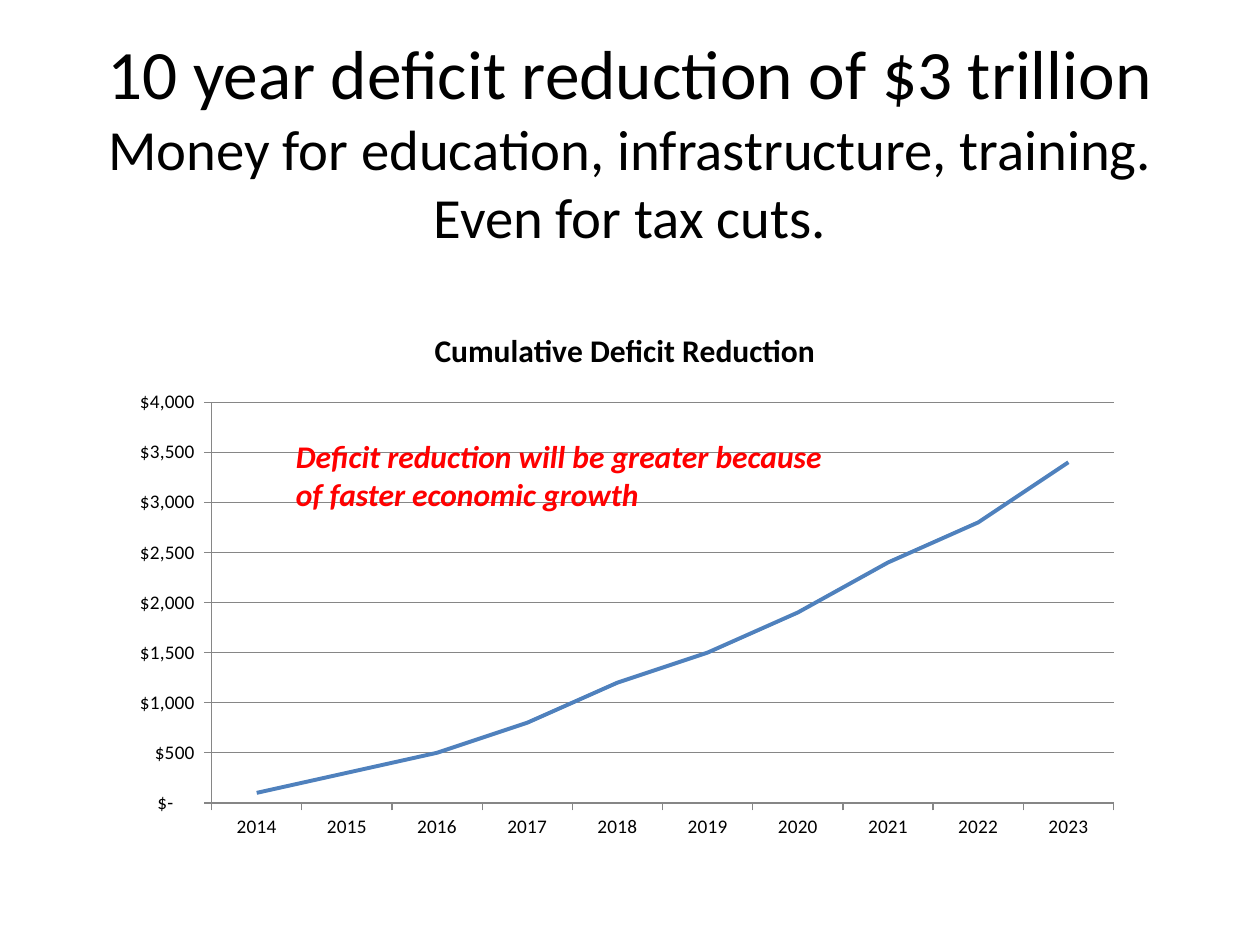
from dataclasses import dataclass

from lxml.etree import SubElement
from pptx import Presentation
from pptx.chart.data import CategoryChartData
from pptx.dml.color import RGBColor
from pptx.enum.chart import XL_CHART_TYPE as ChartType, XL_TICK_MARK as Tick
from pptx.enum.text import MSO_ANCHOR as Anchor, PP_ALIGN as Align
from pptx.oxml.ns import qn
from pptx.slide import Slide
from pptx.util import Inches, Pt

BLACK = RGBColor(0x00, 0x00, 0x00)
RED = RGBColor(0xFF, 0x00, 0x00)
BLUE = RGBColor(0x4F, 0x81, 0xBD)
GRAY = RGBColor(0x86, 0x86, 0x86)

WIDTH, HEIGHT = Inches(10), Inches(7.5)
ACCOUNTING = r'_("$"* #,##0_);_("$"* \(#,##0\);_("$"* "-"??_);_(@_)'
YEARS = range(2014, 2024)
REDUCTION = (100, 300, 500, 800, 1200, 1500, 1900, 2400, 2800, 3400)


@dataclass
class SlideBuilder:
    """Places elements by shares of the slide: left, top, width, height."""
    slide: Slide
    font: str = "Calibri"

    def frame(self, left, top, width, height):
        return (int(WIDTH * left), int(HEIGHT * top),
                int(WIDTH * width), int(HEIGHT * height))

    def style(self, font, size, color=BLACK, bold=False, italic=False):
        font.name, font.size = self.font, Pt(size)
        font.bold, font.italic = bold, italic
        font.color.rgb = color

    def text(self, share, lines, sizes, align=Align.LEFT, anchor=Anchor.TOP, **look):
        """Writes one paragraph whose lines each have their own size."""
        box = self.slide.shapes.add_textbox(*self.frame(*share))
        box.text_frame.word_wrap = True
        box.text_frame.vertical_anchor = anchor
        para = box.text_frame.paragraphs[0]
        para.text = "\v".join(lines)
        para.alignment = align
        for span, size in zip(para.runs, sizes):
            self.style(span.font, size, **look)

    def line_chart(self, share, title, categories, values, plot):
        data = CategoryChartData(number_format=ACCOUNTING)
        data.categories = [str(category) for category in categories]
        data.add_series(title, values)
        chart = self.slide.shapes.add_chart(
            ChartType.LINE, *self.frame(*share), data).chart
        self.style(chart.font, 10)
        chart.has_legend = False

        chart.has_title = True
        heading = chart.chart_title.text_frame
        heading.text = title
        self.style(heading.paragraphs[0].runs[0].font, 18, bold=True)

        chart.plots[0].vary_by_categories = False
        series = chart.plots[0].series[0]
        series.smooth = False
        series.format.line.color.rgb = BLUE
        series.format.line.width = Pt(2.25)

        for axis in (chart.category_axis, chart.value_axis):
            axis.major_tick_mark, axis.minor_tick_mark = Tick.OUTSIDE, Tick.NONE
            self.style(axis.tick_labels.font, 11)
            self.rule(axis.format.line)
        scale = chart.value_axis
        scale.minimum_scale, scale.maximum_scale, scale.major_unit = 0, 4000, 500
        scale.has_major_gridlines = True
        self.rule(scale.major_gridlines.format.line)
        scale.tick_labels.number_format = ACCOUNTING
        scale.tick_labels.number_format_is_linked = False
        self.place_plot(chart, plot)

    def rule(self, line):
        line.color.rgb = GRAY
        line.width = Pt(0.75)

    def place_plot(self, chart, share):
        """Fixes the inner plot area to shares of the chart."""
        area = chart.element.find(".//" + qn("c:plotArea"))
        layout = area.find(qn("c:layout"))
        if layout is None:
            layout = SubElement(area, qn("c:layout"))
            area.insert(0, layout)
        manual = SubElement(layout, qn("c:manualLayout"))
        settings = [("layoutTarget", "inner"), ("xMode", "edge"), ("yMode", "edge")]
        for name, value in settings + list(zip("xywh", share)):
            SubElement(manual, qn("c:" + name)).set("val", str(value))


def main():
    deck = Presentation()
    deck.slide_width, deck.slide_height = WIDTH, HEIGHT
    page = SlideBuilder(deck.slides.add_slide(deck.slide_layouts[6]))
    page.text((0.05, 0.04, 0.9, 0.216),
              ["10 year deficit reduction of $3 trillion",
               "Money for education, infrastructure, training. Even for tax cuts."],
              [39.6, 32.4], align=Align.CENTER, anchor=Anchor.MIDDLE)
    page.line_chart((0.092, 0.323, 0.808, 0.577), "Cumulative Deficit Reduction",
                    YEARS, REDUCTION, plot=(0.094, 0.178, 0.886, 0.735))
    page.text((0.225, 0.456, 0.442, 0.095),
              ["Deficit reduction will be greater because of faster economic growth"],
              [18], color=RED, bold=True, italic=True)
    deck.save("out.pptx")


if __name__ == "__main__":
    main()
